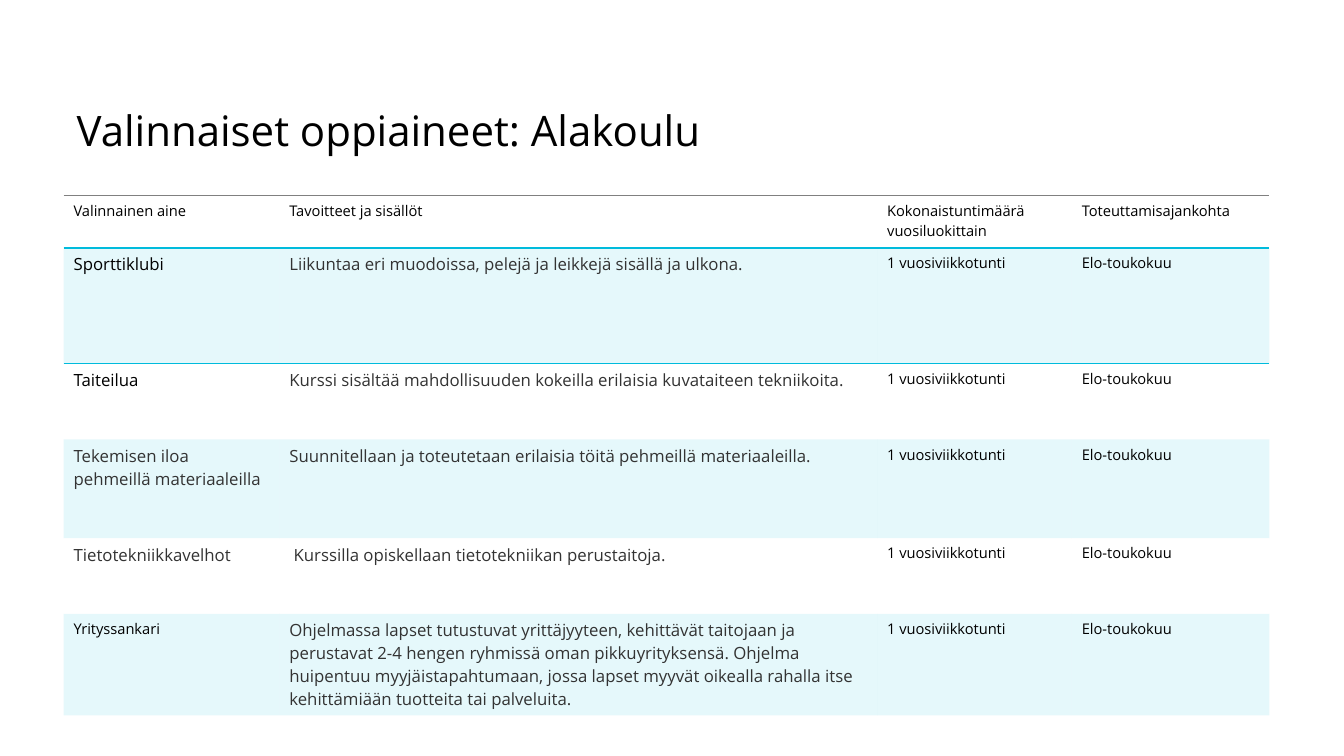
from typing import NamedTuple

from lxml.etree import SubElement
from pptx import Presentation
from pptx.dml.color import RGBColor
from pptx.enum.text import MSO_ANCHOR, PP_ALIGN
from pptx.oxml.ns import qn
from pptx.util import Inches, Pt

FONT = "Open Sans"
BLACK, GREY = "000000", "333333"
TURQUOISE, BAND, RULE_GREY = "00BBDC", "80DDEE", "808080"
NO_STYLE = "{2D5ABB26-0587-4C30-8999-92F81FD0307C}"
SMALL, LARGE = 10.5, 12


class Course(NamedTuple):
    name: str
    goals: str
    height: float
    name_size: float = LARGE
    name_color: str = BLACK
    hours: str = "1 vuosiviikkotunti"
    period: str = "Elo-toukokuu"


HEADINGS = ["Valinnainen aine", "Tavoitteet ja sisällöt",
            "Kokonaistuntimäärä vuosiluokittain", "Toteuttamisajankohta"]
COLUMN_WIDTHS = [2.14, 5.93, 1.93, 1.96]
HEADER_HEIGHT = 0.52
COURSES = [
    Course("Sporttiklubi",
           "Liikuntaa eri muodoissa, pelejä ja leikkejä sisällä ja ulkona.", 1.15),
    Course("Taiteilua",
           "Kurssi sisältää mahdollisuuden kokeilla erilaisia kuvataiteen tekniikoita.", 0.75),
    Course("Tekemisen iloa pehmeillä materiaaleilla",
           "Suunnitellaan ja toteutetaan erilaisia töitä pehmeillä materiaaleilla.",
           0.98, name_color=GREY),
    Course("Tietotekniikkavelhot",
           " Kurssilla opiskellaan tietotekniikan perustaitoja.", 0.75, name_color=GREY),
    Course("Yrityssankari",
           "Ohjelmassa lapset tutustuvat yrittäjyyteen, kehittävät taitojaan ja perustavat "
           "2-4 hengen ryhmissä oman pikkuyrityksensä. Ohjelma huipentuu myyjäistapahtumaan, "
           "jossa lapset myyvät oikealla rahalla itse kehittämiään tuotteita tai palveluita.",
           1.0, name_size=SMALL),
]


def rgb(color: str) -> RGBColor:
    return RGBColor.from_string(color)


def write_text(frame, text: str, *, size: float = SMALL, color: str = BLACK,
               line_spacing: float | None = None) -> None:
    paragraph = frame.paragraphs[0]
    paragraph.alignment = PP_ALIGN.LEFT
    paragraph.line_spacing = line_spacing
    run = paragraph.add_run()
    run.text = text
    run.font.name = FONT
    run.font.size = Pt(size)
    run.font.color.rgb = rgb(color)


def add_border(cell, side: str, color: str) -> None:
    """Rule one side of a cell; call it before the cell is filled."""
    properties = cell._tc.get_or_add_tcPr()
    line = SubElement(properties, qn(f"a:ln{side}"), w=str(Pt(1)))
    fill = SubElement(line, qn("a:solidFill"))
    SubElement(fill, qn("a:srgbClr"), val=color)


def fill_band(cell) -> None:
    cell.fill.solid()
    cell.fill.fore_color.rgb = rgb(BAND)
    color = cell._tc.tcPr.find(f"{qn('a:solidFill')}/{qn('a:srgbClr')}")
    SubElement(color, qn("a:alpha"), val="20000")


def add_title(slide, text: str) -> None:
    title = slide.shapes.title
    title.left, title.top = Inches(0.76), Inches(0.6)
    title.width, title.height = Inches(10.25), Inches(0.94)
    frame = title.text_frame
    frame.margin_left = frame.margin_right = frame.margin_top = frame.margin_bottom = 0
    frame.vertical_anchor = MSO_ANCHOR.BOTTOM
    frame.word_wrap = True
    write_text(frame, text, size=30, line_spacing=0.9)


def add_course_table(slide) -> None:
    heights = [HEADER_HEIGHT] + [course.height for course in COURSES]
    shape = slide.shapes.add_table(
        len(heights), len(HEADINGS), Inches(0.63), Inches(1.94),
        Inches(sum(COLUMN_WIDTHS)), Inches(sum(heights)))
    table = shape.table
    table.first_row = table.horz_banding = False
    next(shape.element.iter(qn("a:tableStyleId"))).text = NO_STYLE
    for column, width in zip(table.columns, COLUMN_WIDTHS):
        column.width = Inches(width)
    for row, height in zip(table.rows, heights):
        row.height = Inches(height)

    for cell, heading in zip(table.rows[0].cells, HEADINGS):
        write_text(cell.text_frame, heading)
        add_border(cell, "T", RULE_GREY)
        add_border(cell, "B", TURQUOISE)
        cell.fill.background()

    for index, course in enumerate(COURSES):
        cells = list(table.rows[index + 1].cells)
        write_text(cells[0].text_frame, course.name,
                   size=course.name_size, color=course.name_color)
        write_text(cells[1].text_frame, course.goals, size=LARGE, color=GREY)
        write_text(cells[2].text_frame, course.hours)
        write_text(cells[3].text_frame, course.period)
        for cell in cells:
            if index == 0:
                add_border(cell, "T", TURQUOISE)
            if index % 2 == 0:
                fill_band(cell)
            else:
                cell.fill.background()


def main() -> None:
    presentation = Presentation()
    presentation.slide_width, presentation.slide_height = Inches(13.33), Inches(7.5)
    slide = presentation.slides.add_slide(presentation.slide_layouts[5])
    add_title(slide, "Valinnaiset oppiaineet: Alakoulu")
    add_course_table(slide)
    presentation.save("out.pptx")


if __name__ == "__main__":
    main()
